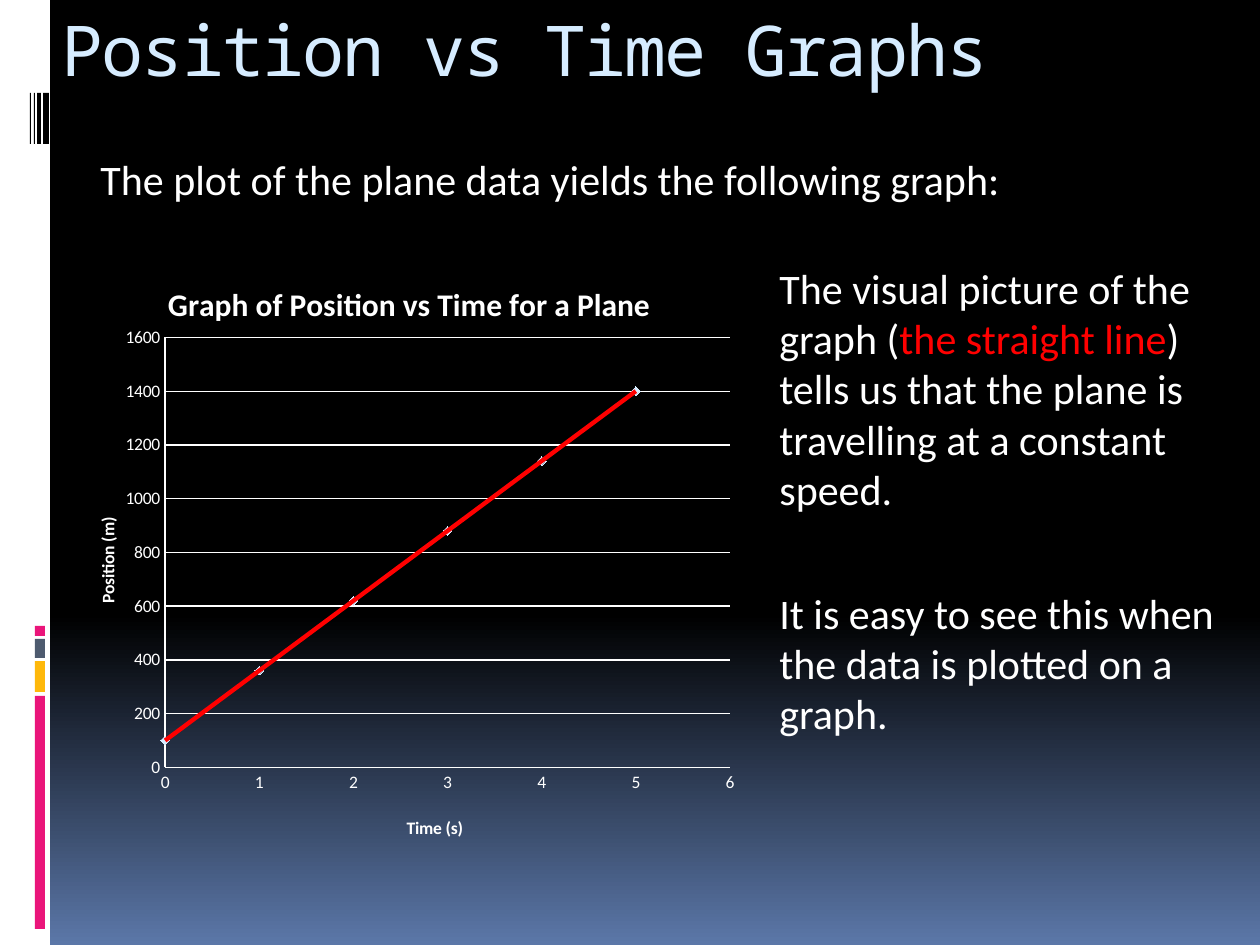
from lxml import etree
from pptx import Presentation
from pptx.chart.data import XyChartData
from pptx.dml.color import RGBColor
from pptx.enum.chart import XL_CHART_TYPE, XL_MARKER_STYLE, XL_TICK_MARK
from pptx.enum.shapes import MSO_SHAPE
from pptx.enum.text import MSO_ANCHOR, MSO_AUTO_SIZE
from pptx.oxml import parse_xml
from pptx.oxml.ns import nsdecls, qn
from pptx.util import Pt

PX = 914400 // 126
COLORS = {
    "white": "FFFFFF", "black": "000000", "pink": "EA157A", "amber": "FEB80A",
    "slate": "4E5B6F", "sky": "D6ECFF", "dusk": "5B77A8", "red": "FF0000",
}
RGB = {name: RGBColor.from_string(value) for name, value in COLORS.items()}


def add_text(slide, box, runs, size=24, font="Calibri"):
    caption = slide.shapes.add_textbox(*[v * PX for v in box])
    frame = caption.text_frame
    frame.word_wrap = True
    frame.vertical_anchor = MSO_ANCHOR.TOP
    frame.auto_size = MSO_AUTO_SIZE.SHAPE_TO_FIT_TEXT
    for words, color in runs:
        run = frame.paragraphs[0].add_run()
        run.text = words
        run.font.size = Pt(size)
        run.font.name = font
        run.font.color.rgb = RGB[color]
    return frame


def place(parent, index, **fractions):
    for old in parent.findall(qn("c:layout")):
        parent.remove(old)
    layout = etree.Element(qn("c:layout"))
    manual = etree.SubElement(layout, qn("c:manualLayout"))
    if "w" in fractions:
        etree.SubElement(manual, qn("c:layoutTarget"), val="inner")
    for side in "xy":
        etree.SubElement(manual, qn(f"c:{side}Mode"), val="edge")
    for key, value in fractions.items():
        etree.SubElement(manual, qn(f"c:{key}"), val=str(value))
    parent.insert(index, layout)


prs = Presentation()
prs.slide_width = 1260 * PX
prs.slide_height = 945 * PX
slide = prs.slides.add_slide(prs.slide_layouts[6])

sky = slide.background.fill
sky.gradient()
sky.gradient_angle = 270
for stop, (position, color) in zip(sky.gradient_stops, [(0.65, "black"), (1, "dusk")]):
    stop.position = position
    stop.color.rgb = RGB[color]

side_bars = [
    (0, 0, 50, 945, "white"),
    (35, 696, 10, 233, "pink"),
    (35, 661, 10, 31, "amber"),
    (35, 639, 10, 19, "slate"),
    (35, 626, 10, 10, "pink"),
]
side_bars += [(x, 93, w, 51, "black") for x, w in [(43, 6), (37, 4), (34, 1), (30, 1)]]
for *box, color in side_bars:
    bar = slide.shapes.add_shape(MSO_SHAPE.RECTANGLE, *[v * PX for v in box])
    bar.shadow.inherit = False
    bar.fill.solid()
    bar.fill.fore_color.rgb = RGB[color]
    bar.line.fill.background()

heading = add_text(slide, (49, 0, 1071, 126), [("Position vs Time Graphs", "sky")],
                   40, "Noto Sans Mono")
heading.auto_size = MSO_AUTO_SIZE.NONE
heading.paragraphs[0].runs[0].font._element.set("spc", "-100")

plane_data = XyChartData()
positions = plane_data.add_series("Series 1")
for second in range(6):
    positions.add_data_point(second, 100 + 260 * second)
chart = slide.shapes.add_chart(
    XL_CHART_TYPE.XY_SCATTER, 59 * PX, 246 * PX, 689 * PX, 610 * PX, plane_data).chart
chart.has_legend = False
chart.font.size = Pt(10)
chart.font.name = "Calibri"
chart.font.color.rgb = RGB["white"]

time_axis, position_axis = chart.category_axis, chart.value_axis
for axis, top, step in [(time_axis, 6, 1), (position_axis, 1600, 200)]:
    axis.minimum_scale = 0
    axis.maximum_scale = top
    axis.major_unit = step
    axis.major_tick_mark = XL_TICK_MARK.NONE
    axis.minor_tick_mark = XL_TICK_MARK.NONE
    axis.has_major_gridlines = axis is position_axis
    axis.format.line.color.rgb = RGB["white"]
    axis.format.line.width = Pt(0.75)
gridlines = position_axis.major_gridlines.format.line
gridlines.color.rgb = RGB["white"]
gridlines.width = Pt(0.75)

for owner, words, size, x, y in [
    (chart, "Graph of Position vs Time for a Plane", 18, 0.15, 0.05),
    (time_axis, "Time (s)", 10, 0.5, 0.93),
    (position_axis, "Position (m)", 10, 0.05, 0.44),
]:
    title = owner.chart_title if owner is chart else owner.axis_title
    run = title.text_frame.paragraphs[0].add_run()
    run.text = words
    run.font.size = Pt(size)
    run.font.name = "Calibri"
    run.font.bold = True
    run.font.color.rgb = RGB["white"]
    place(title._element, 1, x=x, y=y)
place(chart._chartSpace.chart.plotArea, 0, x=0.154, y=0.15, w=0.82, h=0.705)

chart.plots[0].vary_by_categories = False
plane = chart.plots[0].series[0]
plane.format.line.fill.background()
plane.marker.style = XL_MARKER_STYLE.DIAMOND
plane.marker.size = 5
plane.marker.format.fill.solid()
plane.marker.format.fill.fore_color.rgb = RGB["sky"]
plane.marker.format.line.color.rgb = RGB["dusk"]
trend = parse_xml(
    f'<c:trendline {nsdecls("c", "a")}><c:spPr><a:ln w="{Pt(2.5)}"><a:solidFill>'
    f'<a:srgbClr val="{COLORS["red"]}"/></a:solidFill></a:ln></c:spPr>'
    '<c:trendlineType val="linear"/><c:dispRSqr val="0"/><c:dispEq val="0"/></c:trendline>')
plane._element.find(qn("c:xVal")).addprevious(trend)

add_text(slide, (88, 147, 955, 63),
         [("The plot of the plane data yields the following graph:", "white")])
add_text(slide, (767, 256, 473, 267), [
    ("The visual picture of the graph (", "white"),
    ("the straight line", "red"),
    (") tells us that the plane is travelling at a constant speed.", "white"),
])
add_text(slide, (767, 581, 473, 165),
         [("It is easy to see this when the data is plotted on a graph.", "white")])

prs.save("out.pptx")
